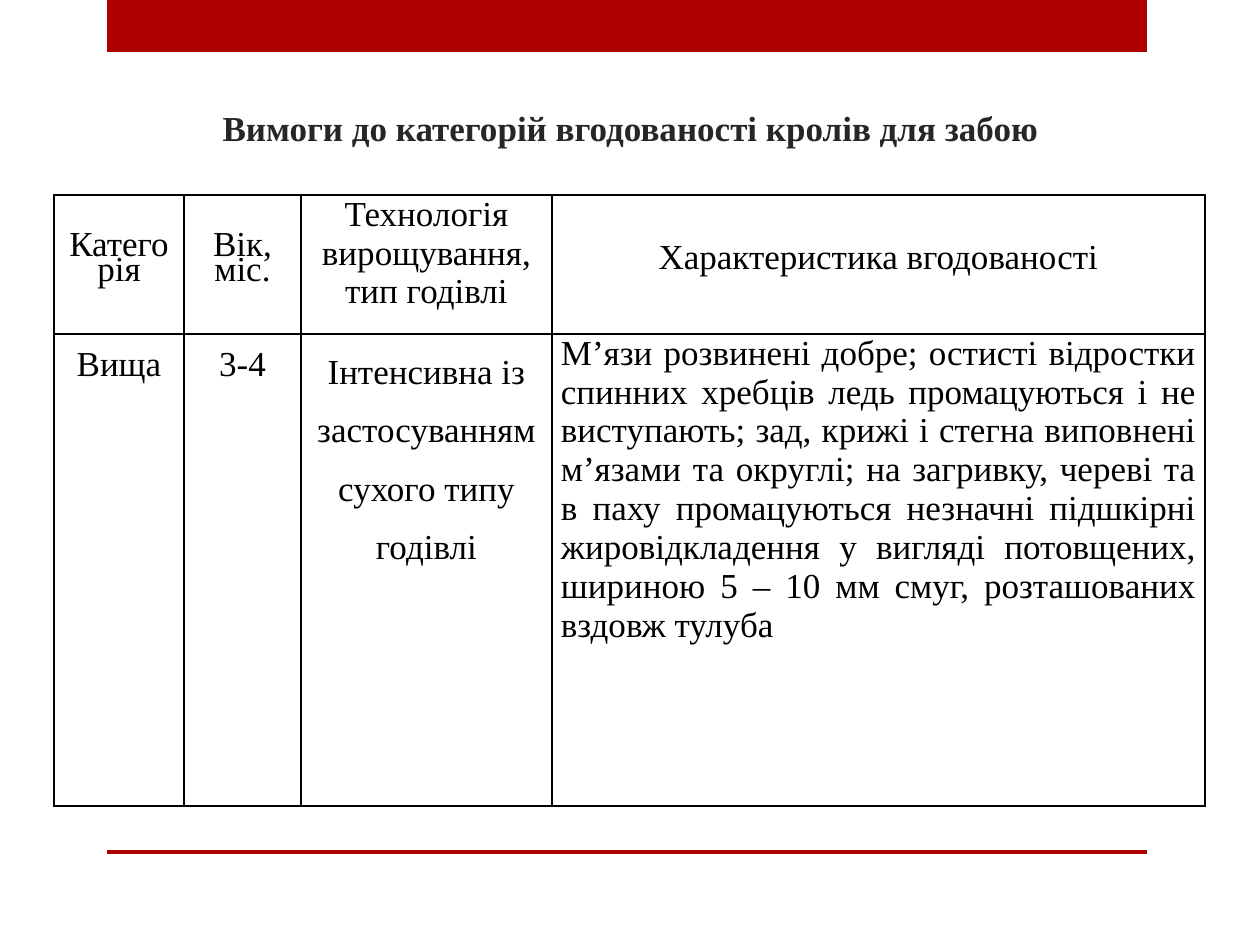
from lxml.etree import SubElement
from pptx import Presentation
from pptx.dml.color import RGBColor
from pptx.enum.shapes import MSO_SHAPE as Shape
from pptx.enum.text import MSO_ANCHOR as Anchor, PP_ALIGN as Align
from pptx.oxml.ns import qn
from pptx.util import Pt

PX = 914400 // 126
RED = RGBColor(0xAD, 0x01, 0x01)
INK = RGBColor(0x26, 0x26, 0x26)
BLACK = RGBColor(0, 0, 0)
FONT = "Times New Roman"
TIGHT = Pt(14.3)

TITLE = "Вимоги до категорій вгодованості кролів для забою"
BARS = [(107, 0, 1040, 52), (107, 850, 1040, 4)]
COLUMNS = [130, 117, 251, 653]
ROWS = [139, 472]
# text, alignment, line spacing, anchor, top margin
CELLS = [
    [
        ("Категорія", Align.CENTER, TIGHT, Anchor.MIDDLE, 0),
        ("Вік,\nміс.", Align.CENTER, TIGHT, Anchor.MIDDLE, 0),
        ("Технологія вирощування, тип годівлі", Align.CENTER, 1.0, Anchor.TOP, 0),
        ("Характеристика вгодованості", Align.CENTER, TIGHT, Anchor.MIDDLE, 0),
    ],
    [
        ("Вища", Align.CENTER, TIGHT, Anchor.TOP, 25),
        ("3-4", Align.CENTER, TIGHT, Anchor.TOP, 25),
        ("Інтенсивна із застосуванням сухого типу годівлі",
         Align.CENTER, 1.5, Anchor.TOP, 0),
        ("М’язи розвинені добре; остисті відростки спинних хребців ледь "
         "промацуються і не виступають; зад, крижі і стегна виповнені м’язами "
         "та округлі; на загривку, череві та в паху промацуються незначні "
         "підшкірні жировідкладення у вигляді потовщених, шириною 5 – 10 мм "
         "смуг, розташованих вздовж тулуба", Align.JUSTIFY, 1.0, Anchor.TOP, 0),
    ],
]


def px(*values):
    return [value * PX for value in values]


def write(frame, text, align, spacing, color, bold=False):
    frame.text = text
    frame.word_wrap = True
    for paragraph in frame.paragraphs:
        paragraph.alignment = align
        paragraph.line_spacing = spacing
        font = paragraph.font
        font.name, font.size, font.bold = FONT, Pt(20), bold
        font.color.rgb = color


def add_borders(cell):
    properties = cell._tc.get_or_add_tcPr()
    for index, side in enumerate(("lnL", "lnR", "lnT", "lnB")):
        line = SubElement(properties, qn(f"a:{side}"), w=str(Pt(1)))
        fill = SubElement(line, qn("a:solidFill"))
        SubElement(fill, qn("a:srgbClr"), val=str(BLACK))
        properties.insert(index, line)


def main():
    """Build the slide on rabbit fatness categories."""
    presentation = Presentation()
    presentation.slide_width, presentation.slide_height = px(1260, 945)
    slide = presentation.slides.add_slide(presentation.slide_layouts[6])

    for bar in BARS:
        shape = slide.shapes.add_shape(Shape.RECTANGLE, *px(*bar))
        shape.shadow.inherit = False
        shape.fill.solid()
        shape.fill.fore_color.rgb = RED
        shape.line.fill.background()

    title = slide.shapes.add_textbox(*px(64, 96, 1133, 59)).text_frame
    title.vertical_anchor = Anchor.BOTTOM
    write(title, TITLE, Align.CENTER, 1.5, INK, bold=True)

    table = slide.shapes.add_table(
        len(ROWS), len(COLUMNS), *px(54, 195, sum(COLUMNS), sum(ROWS))).table
    table.first_row = table.horz_banding = False
    for column, width in zip(table.columns, px(*COLUMNS)):
        column.width = width
    for row, height, contents in zip(table.rows, px(*ROWS), CELLS):
        row.height = height
        for cell, (text, align, spacing, anchor, top) in zip(row.cells, contents):
            cell.margin_left, cell.margin_top, cell.margin_right, cell.margin_bottom = px(9, top, 9, 0)
            cell.vertical_anchor = anchor
            cell.fill.background()
            add_borders(cell)
            write(cell.text_frame, text, align, spacing, BLACK)

    presentation.save("out.pptx")


if __name__ == "__main__":
    main()
